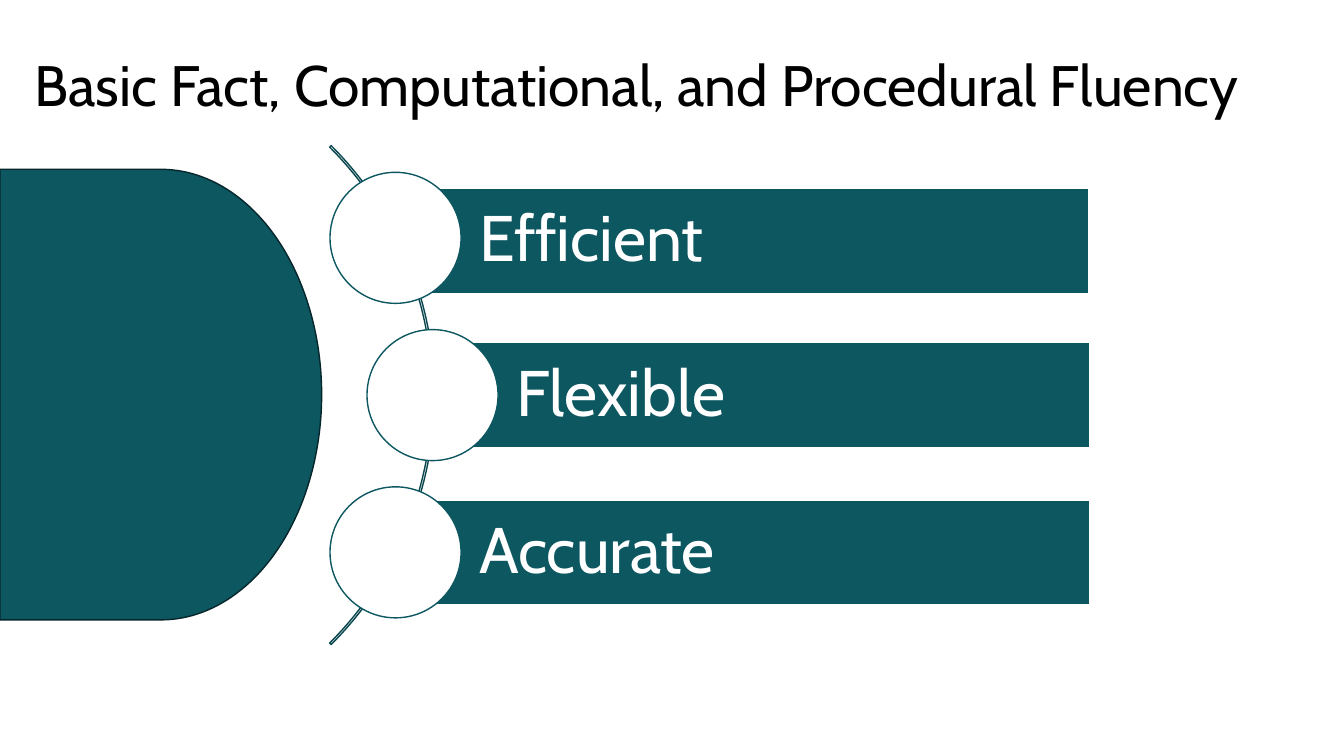
from dataclasses import dataclass
from math import sqrt

from pptx import Presentation
from pptx.dml.color import RGBColor
from pptx.enum.shapes import MSO_SHAPE as Preset
from pptx.enum.text import MSO_ANCHOR as Anchor, MSO_AUTO_SIZE as AutoSize, PP_ALIGN as Align
from pptx.util import Inches, Pt


@dataclass(frozen=True)
class Theme:
    font: str = "Cabin"
    black: str = "000000"
    white: str = "FFFFFF"
    teal: str = "0D5761"
    arc_line: str = "0A464E"
    dark_line: str = "06262B"
    title_size: float = 40.7
    bar_size: float = 46
    line_width: float = 1
    line_spacing: float = 0.9


class FluencySlide:
    """Draws themed elements on one slide, measured in one-inch grid columns and rows."""

    columns, rows = 13.33, 7.5

    def __init__(self, presentation, theme):
        presentation.slide_width = Inches(self.columns)
        presentation.slide_height = Inches(self.rows)
        self.theme = theme
        self.slide = presentation.slides.add_slide(presentation.slide_layouts[5])

    def cells(self, *lengths):
        return [Inches(length) for length in lengths]

    def set_text(self, shape, text, size, color, anchor, space_after):
        frame = shape.text_frame
        frame.word_wrap = True
        frame.auto_size = AutoSize.NONE
        frame.vertical_anchor = anchor
        frame.text = text
        paragraph = frame.paragraphs[0]
        paragraph.alignment = Align.LEFT
        paragraph.line_spacing = self.theme.line_spacing
        paragraph.space_before = Pt(0)
        paragraph.space_after = Pt(space_after)
        paragraph.font.name = self.theme.font
        paragraph.font.size = Pt(size)
        paragraph.font.color.rgb = RGBColor.from_string(color)

    def title(self, text, left, top, width, height):
        shape = self.slide.shapes.title
        shape.left, shape.top, shape.width, shape.height = self.cells(left, top, width, height)
        self.set_text(shape, text, self.theme.title_size, self.theme.black, Anchor.TOP, 6)

    def shape(self, preset, left, top, width, height, fill, line):
        shape = self.slide.shapes.add_shape(preset, *self.cells(left, top, width, height))
        shape.shadow.inherit = False
        if fill:
            shape.fill.solid()
            shape.fill.fore_color.rgb = RGBColor.from_string(fill)
        else:
            shape.fill.background()
        shape.line.color.rgb = RGBColor.from_string(line)
        shape.line.width = Pt(self.theme.line_width)
        return shape

    def arc(self, center_x, center_y, radius):
        arc = self.shape(Preset.BLOCK_ARC, center_x - radius, center_y - radius,
                         2 * radius, 2 * radius, None, self.theme.arc_line)
        for index, value in enumerate((189, 27, 0.003)):
            arc.adjustments[index] = value

    def bar(self, text, left, top, right, height):
        bar = self.shape(Preset.RECTANGLE, left, top, right - left, height,
                         self.theme.teal, self.theme.white)
        frame = bar.text_frame
        frame.margin_left = Inches(0.83)
        frame.margin_top = frame.margin_right = frame.margin_bottom = Inches(0.13)
        self.set_text(bar, text, self.theme.bar_size, self.theme.white, Anchor.MIDDLE, 0)

    def circle(self, center_x, center_y, diameter):
        self.shape(Preset.OVAL, center_x - diameter / 2, center_y - diameter / 2,
                   diameter, diameter, self.theme.white, self.theme.teal)


def main():
    presentation = Presentation()
    theme = Theme()
    page = FluencySlide(presentation, theme)
    page.title("Basic Fact, Computational, and Procedural Fluency", 0.24, 0.52, 12.85, 1.35)
    page.shape(Preset.FLOWCHART_DELAY, 0, 1.68, 3.19, 4.47, theme.teal, theme.dark_line)

    arc_x, arc_y, radius = 0.81, 3.92, 3.5
    page.arc(arc_x, arc_y, radius)

    step, bar_height = 1.56, 1.04
    bars = (("Efficient", -1, 0.03, 10.8), ("Flexible", 0, 0, 10.81), ("Accurate", 1, 0, 10.81))
    for text, position, drop, right in bars:
        offset = position * step
        center_x = arc_x - 0.02 + sqrt(radius ** 2 - offset ** 2)
        center_y = arc_y + offset
        page.bar(text, center_x, center_y - bar_height / 2 + drop, right, bar_height)
        page.circle(center_x, center_y, 1.3)

    presentation.save("out.pptx")


if __name__ == "__main__":
    main()
